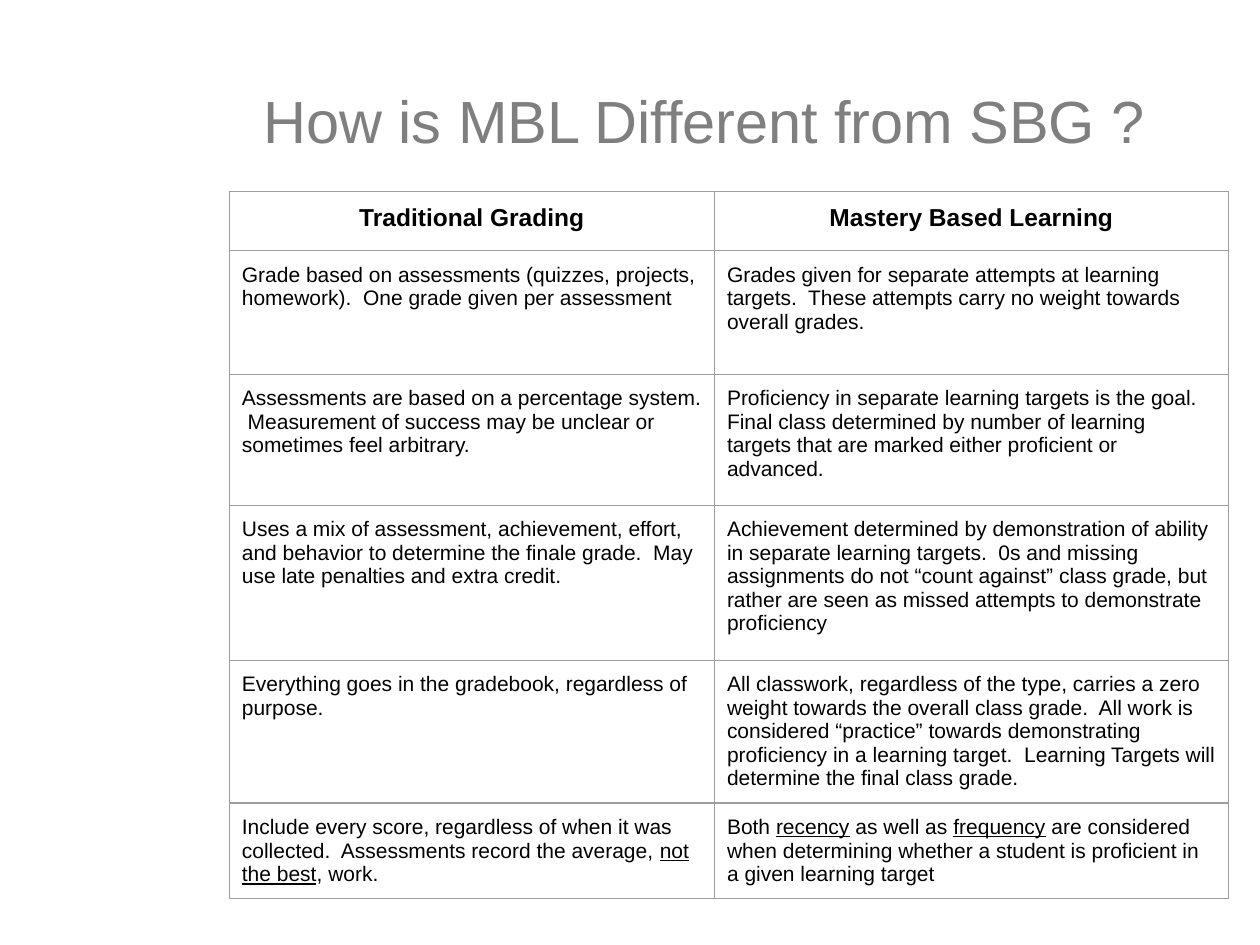
from dataclasses import dataclass

from lxml import etree
from pptx import Presentation
from pptx.dml.color import RGBColor
from pptx.enum.text import MSO_ANCHOR, MSO_AUTO_SIZE, PP_ALIGN
from pptx.oxml.ns import qn
from pptx.util import Inches, Pt

LEFT, CENTER = PP_ALIGN.LEFT, PP_ALIGN.CENTER
TOP, MIDDLE = MSO_ANCHOR.TOP, MSO_ANCHOR.MIDDLE
NO_FIT = MSO_AUTO_SIZE.NONE
SIDES = ("a:lnL", "a:lnR", "a:lnT", "a:lnB")


@dataclass(frozen=True)
class Theme:
    font: str = "Arial"
    gray: str = "7F7F7F"
    ink: str = "000000"
    rule: str = "9E9E9E"
    line: float = 0.75
    title: int = 34
    head: int = 14
    body: int = 12


THEME = Theme()
LEFT_EDGE = 1.82
COLS = (3.85, 4.08)
HEIGHTS = (0.47, 0.98, 1.04, 1.23, 0.73, 0.48)

# Words between underscores are underlined.
ROWS = (
    ("Traditional Grading", "Mastery Based Learning"),
    ("Grade based on assessments (quizzes, projects, homework).  "
     "One grade given per assessment",
     "Grades given for separate attempts at learning targets.  "
     "These attempts carry no weight towards overall grades."),
    ("Assessments are based on a percentage system.  "
     "Measurement of success may be unclear or sometimes feel arbitrary.",
     "Proficiency in separate learning targets is the goal.  "
     "Final class determined by number of learning targets that are marked "
     "either proficient or advanced."),
    ("Uses a mix of assessment, achievement, effort, and behavior to "
     "determine the finale grade.  May use late penalties and extra credit.",
     "Achievement determined by demonstration of ability in separate "
     "learning targets.  0s and missing assignments do not “count against” "
     "class grade, but rather are seen as missed attempts to demonstrate "
     "proficiency"),
    ("Everything goes in the gradebook, regardless of purpose.",
     "All classwork, regardless of the type, carries a zero weight towards "
     "the overall class grade.  All work is considered “practice” towards "
     "demonstrating proficiency in a learning target.  Learning Targets "
     "will determine the final class grade."),
    ("Include every score, regardless of when it was collected.  "
     "Assessments record the average, _not the best_, work.",
     "Both _recency_ as well as _frequency_ are considered when determining "
     "whether a student is proficient in a given learning target"),
)


def write(frame, text, size, color=THEME.ink, bold=False, align=LEFT,
          space=None):
    """Fill a text frame, underlining what stands between underscores."""
    frame.word_wrap = True
    para = frame.paragraphs[0]
    para.alignment = align
    para.line_spacing = space
    for i, part in enumerate(text.split("_")):
        run = para.add_run()
        run.text = part
        font = run.font
        font.name, font.size, font.bold = THEME.font, Pt(size), bold
        font.underline = i % 2 == 1
        font.color.rgb = RGBColor.from_string(color)


def add_title(slide, text):
    title = slide.shapes.title
    title.left, title.top = Inches(LEFT_EDGE), Inches(0.58)
    title.width, title.height = Inches(7.54), Inches(0.84)
    frame = title.text_frame
    frame.auto_size = NO_FIT
    frame.vertical_anchor = MIDDLE
    write(frame, text, THEME.title, THEME.gray, align=CENTER, space=0.8)


def add_rules(cell):
    """Draw a thin line on each side of a cell."""
    props = cell._tc.get_or_add_tcPr()
    for i, side in enumerate(SIDES):
        line = etree.Element(qn(side), w=str(Pt(THEME.line)))
        fill = etree.SubElement(line, qn("a:solidFill"))
        etree.SubElement(fill, qn("a:srgbClr"), val=THEME.rule)
        props.insert(i, line)


def fill_cell(cell, text, head):
    cell.margin_left = cell.margin_right = Inches(0.1)
    cell.margin_top = cell.margin_bottom = Inches(0.1)
    cell.vertical_anchor = TOP
    cell.fill.background()
    add_rules(cell)
    if head:
        write(cell.text_frame, text, THEME.head, bold=True, align=CENTER)
    else:
        write(cell.text_frame, text, THEME.body)


def add_grid(slide):
    table = slide.shapes.add_table(
        len(ROWS), len(COLS), Inches(LEFT_EDGE), Inches(1.52),
        Inches(sum(COLS)), Inches(sum(HEIGHTS))).table
    table.first_row = table.horz_banding = False
    for col, width in zip(table.columns, COLS):
        col.width = Inches(width)
    for r, (row, height) in enumerate(zip(table.rows, HEIGHTS)):
        row.height = Inches(height)
        for cell, text in zip(row.cells, ROWS[r]):
            fill_cell(cell, text, head=r == 0)


def main():
    deck = Presentation()
    deck.slide_width, deck.slide_height = Inches(10), Inches(7.5)
    slide = deck.slides.add_slide(deck.slide_layouts.get_by_name("Title Only"))
    add_title(slide, "How is MBL Different from SBG ?")
    add_grid(slide)
    deck.save("out.pptx")


if __name__ == "__main__":
    main()
